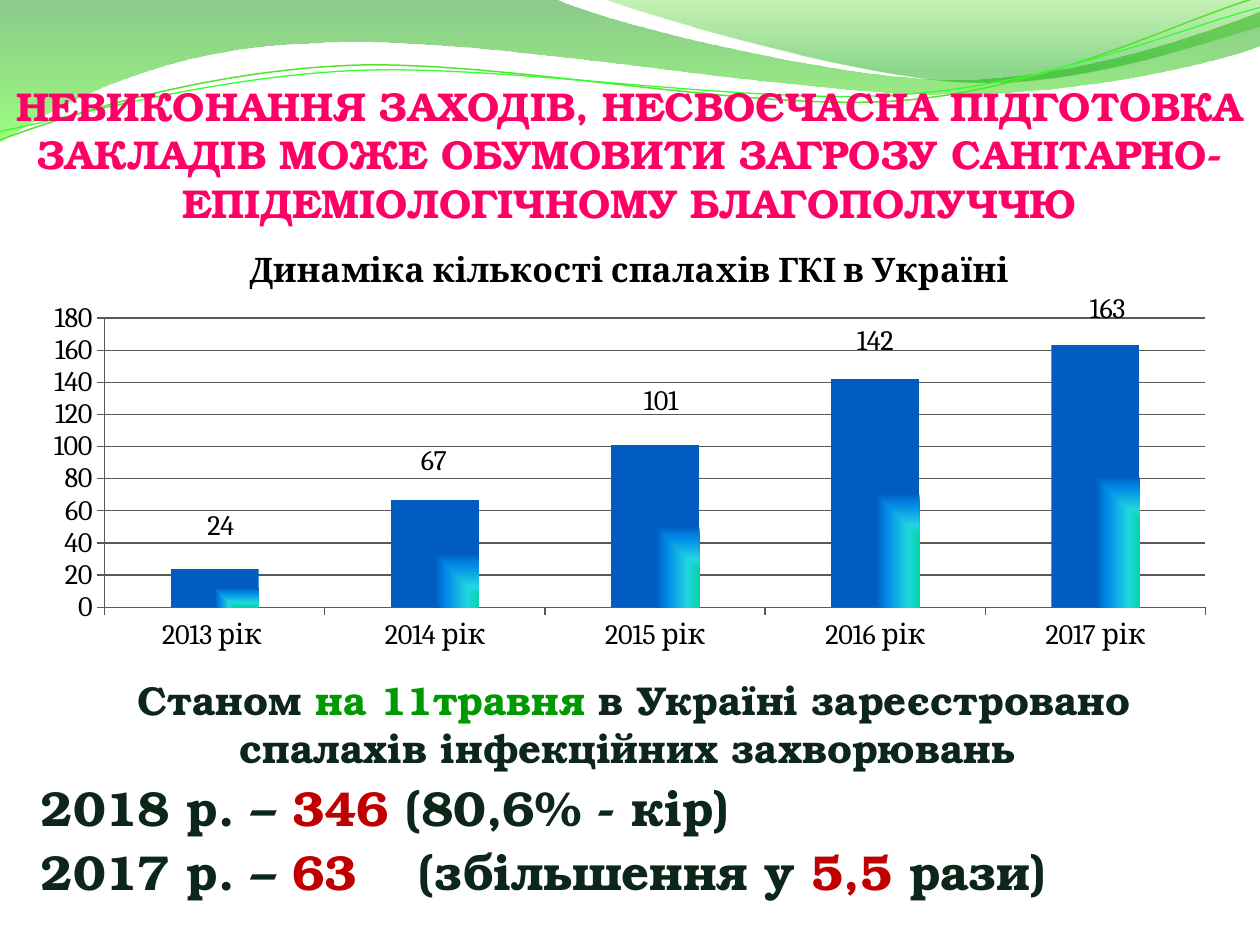
import pptx
import pptx.chart.data
import pptx.dml.color
import pptx.enum.chart
import pptx.enum.text
import pptx.oxml
import pptx.oxml.ns
import pptx.util

Pt = pptx.util.Pt
RGBColor = pptx.dml.color.RGBColor
PP_ALIGN = pptx.enum.text.PP_ALIGN
qn = pptx.oxml.ns.qn
nsdecls = pptx.oxml.ns.nsdecls

PINK = RGBColor(0xFF, 0x00, 0x66)
DARK = RGBColor(0x0D, 0x26, 0x1A)
GREEN = RGBColor(0x00, 0x99, 0x00)
RED = RGBColor(0xC0, 0x00, 0x00)
BLACK = RGBColor(0x00, 0x00, 0x00)
GREY = RGBColor(0x59, 0x59, 0x59)
LIME = RGBColor(0x5A, 0xE1, 0x2D)
NEON = RGBColor(0x33, 0xFF, 0x33)
FONT = "TeX Gyre Bonum"
CHART_FONT = "Cambria"

TITLE = ("НЕВИКОНАННЯ ЗАХОДІВ, НЕСВОЄЧАСНА ПІДГОТОВКА ЗАКЛАДІВ МОЖЕ ОБУМОВИТИ "
         "ЗАГРОЗУ САНІТАРНО-ЕПІДЕМІОЛОГІЧНОМУ БЛАГОПОЛУЧЧЮ")
BODY = [
    (23, PP_ALIGN.CENTER, [("Станом ", DARK), ("на\u00a011травня ", GREEN),
                           ("в Україні зареєстровано спалахів інфекційних захворювань ", DARK)]),
    (28, PP_ALIGN.LEFT, [("2018 р. – ", DARK), ("346 ", RED), ("(80,6% - кір)", DARK)]),
    (28, PP_ALIGN.LEFT, [("2017 р. – ", DARK), ("63", RED), (" \t(збільшення у ", DARK),
                         ("5,5", RED), (" рази)", DARK)]),
]
CHART_TITLE = "Динаміка кількості спалахів ГКІ в Україні"
OUTBREAKS = {"2013 рік ": 24, "2014 рік": 67, "2015 рік": 101, "2016 рік": 142, "2017 рік": 163}
LABEL_SHIFT_PERCENT = [(0.5, -4.9), (-0.1, -4.1), (0.5, -5.2), (0, -3.9), (1, -3.6)]
BAR_STOPS = [(0, "03D4A8", 100), (25, "21D6E0", 100), (75, "0087E6", 100), (100, "005CBF", 100)]
CORNER = '<a:path path="rect"><a:fillToRect l="100000" t="100000"/></a:path>'
DOWN = '<a:lin ang="5400000" scaled="0"/>'

WAVES = [
    ([(0, 0), (317, -0.7), (342.7, 12.2, 478, 45.4, 546, 45.4), (614, 45.4, 690, 18.7, 720, 6.5),
      (720.7, 26), (708, 31.7, 626.4, 54.7, 537, 54), (448, 54, 275, 20.2, 185, 24.5),
      (93, 26, 33, 60, -0.7, 81.4)],
     [(0, "008B00", 45), (100, "51FF17", 55)]),
    ([(345, -0.7), (366.5, 8, 491, 44.6, 553.7, 46.8), (616.3, 49.7, 692, 23, 720, 15), (720, 0)],
     [(0, "40D30F", 30), (80, "00A600", 45)]),
]
STRANDS = [
    ([(0, 80), (34.6, 67, 113.8, 41, 199.4, 37.4), (284.4, 33.8, 427, 64, 513.4, 57.6),
      (599.8, 51, 675.4, 10.8, 718.6, -1.4)], LIME, 0.85),
    ([(0, 75), (33.8, 69, 118, 44, 203.8, 40.3), (290, 36.7, 430, 60.5, 516, 54),
      (602, 48.2, 677.5, 15, 720, 4.3)], NEON, 0.75),
]


def place(sp, left, top, width, height):
    sp.left, sp.top, sp.width, sp.height = Pt(left), Pt(top), Pt(width), Pt(height)


def draw(s, segments, close):
    points = [(Pt(seg[i]), Pt(seg[i + 1])) for seg in segments for i in range(0, len(seg), 2)]
    builder = s.shapes.build_freeform(*points[0])
    builder.add_line_segments(points[1:], close=close)
    sp = builder.convert_to_shape()
    lines = iter(list(sp._element.iter(qn("a:lnTo"))))
    for seg in segments[1:]:
        line = next(lines)
        if len(seg) == 6:
            line.addprevious(pptx.oxml.parse_xml(f'<a:cubicBezTo {nsdecls("a")}/>'))
            curve = line.getprevious()
            for piece in (line, next(lines), next(lines)):
                curve.append(piece[0])
                piece.getparent().remove(piece)
    sp.shadow.inherit = False
    sp.fill.background()
    return sp


def set_gradient(fill, sp_pr, stops, direction):
    fill.background()
    gs = "".join(f'<a:gs pos="{pos * 1000}"><a:srgbClr val="{color}">'
                 f'<a:alpha val="{alpha * 1000}"/></a:srgbClr></a:gs>' for pos, color, alpha in stops)
    grad = pptx.oxml.parse_xml(f'<a:gradFill {nsdecls("a")} rotWithShape="1">'
                               f'<a:gsLst>{gs}</a:gsLst>{direction}</a:gradFill>')
    sp_pr.replace(sp_pr.find(qn("a:noFill")), grad)


def manual_layout(**values):
    parts = "".join(f'<c:{key} val="{value}"/>' for key, value in values.items())
    return pptx.oxml.parse_xml(f'<c:layout {nsdecls("c")}>'
                               f'<c:manualLayout>{parts}</c:manualLayout></c:layout>')


def format_run(r, size, color, name=FONT):
    r.font.size, r.font.bold, r.font.name = Pt(size), True, name
    r.font.color.rgb = color


def add_outbreak_chart(s):
    data = pptx.chart.data.CategoryChartData()
    data.categories = list(OUTBREAKS)
    data.add_series("Series 1", list(OUTBREAKS.values()))
    chart = s.shapes.add_chart(pptx.enum.chart.XL_CHART_TYPE.COLUMN_CLUSTERED,
                               Pt(16.6), Pt(129.8), Pt(686), Pt(247.7), data).chart
    chart.has_legend = False
    chart.font.size, chart.font.name = Pt(16.1), CHART_FONT
    chart.font.color.rgb = BLACK
    chart.has_title = True
    chart.chart_title.include_in_layout = False
    tf = chart.chart_title.text_frame
    tf.text = CHART_TITLE
    format_run(tf.paragraphs[0].runs[0], 19.3, BLACK, CHART_FONT)

    for axis in (chart.category_axis, chart.value_axis):
        axis.major_tick_mark = pptx.enum.chart.XL_TICK_MARK.OUTSIDE
        axis.format.line.color.rgb = GREY
    value_axis = chart.value_axis
    value_axis.minimum_scale, value_axis.maximum_scale, value_axis.major_unit = 0, 180, 20
    value_axis.major_gridlines.format.line.color.rgb = GREY

    plot = chart.plots[0]
    plot.gap_width, plot.vary_by_categories = 150, False
    series = plot.series[0]
    set_gradient(series.format.fill, series._element.find(qn("c:spPr")), BAR_STOPS, CORNER)
    series.data_labels.show_value = True
    for leader in series._element.iter(qn("c:showLeaderLines")):
        leader.set("val", "0")
    for i in range(len(OUTBREAKS)):
        series.points[i].data_label.position = pptx.enum.chart.XL_LABEL_POSITION.OUTSIDE_END
    for label, (x, y) in zip(series._element.iter(qn("c:dLbl")), LABEL_SHIFT_PERCENT):
        label.insert(1, manual_layout(x=x / 100, y=y / 100))

    area = chart._chartSpace.find(".//" + qn("c:plotArea"))
    for old in area.findall(qn("c:layout")):
        area.remove(old)
    area.insert(0, manual_layout(layoutTarget="inner", xMode="edge", yMode="edge",
                                 x=0.063, y=0.21, w=0.917, h=0.667))


def main():
    prs = pptx.Presentation()
    prs.slide_width, prs.slide_height = Pt(720), Pt(540)
    s = prs.slides.add_slide(prs.slide_layouts[1])
    title, body = s.shapes.title, s.placeholders[1]

    for segments, stops in WAVES:
        sp = draw(s, segments, True)
        sp.line.fill.background()
        set_gradient(sp.fill, sp._element.spPr, stops, DOWN)
    for segments, color, width in STRANDS:
        sp = draw(s, segments, False)
        sp.line.color.rgb, sp.line.width = color, Pt(width)

    s.shapes._spTree.append(title._element)
    place(title, 0, 45, 720, 84.2)
    tf = title.text_frame
    tf.text = TITLE
    tf.auto_size = pptx.enum.text.MSO_AUTO_SIZE.NONE
    tf.vertical_anchor = pptx.enum.text.MSO_ANCHOR.BOTTOM
    tf.margin_left = tf.margin_right = tf.margin_bottom = 0
    tf.paragraphs[0].alignment = PP_ALIGN.CENTER
    format_run(tf.paragraphs[0].runs[0], 23, PINK)

    add_outbreak_chart(s)

    s.shapes._spTree.append(body._element)
    place(body, 11.2, 382.3, 697.7, 140.4)
    tf = body.text_frame
    tf.auto_size = pptx.enum.text.MSO_AUTO_SIZE.NONE
    for i, (size, align, runs) in enumerate(BODY):
        p = tf.add_paragraph() if i else tf.paragraphs[0]
        p.alignment, p.space_before = align, Pt(3)
        p_pr = p._p.get_or_add_pPr()
        p_pr.set("marL", str(Pt(5)))
        p_pr.set("indent", "0")
        p_pr.append(pptx.oxml.parse_xml(f'<a:buNone {nsdecls("a")}/>'))
        for text, color in runs:
            r = p.add_run()
            r.text = text
            format_run(r, size, color)

    prs.save("out.pptx")


if __name__ == "__main__":
    main()
